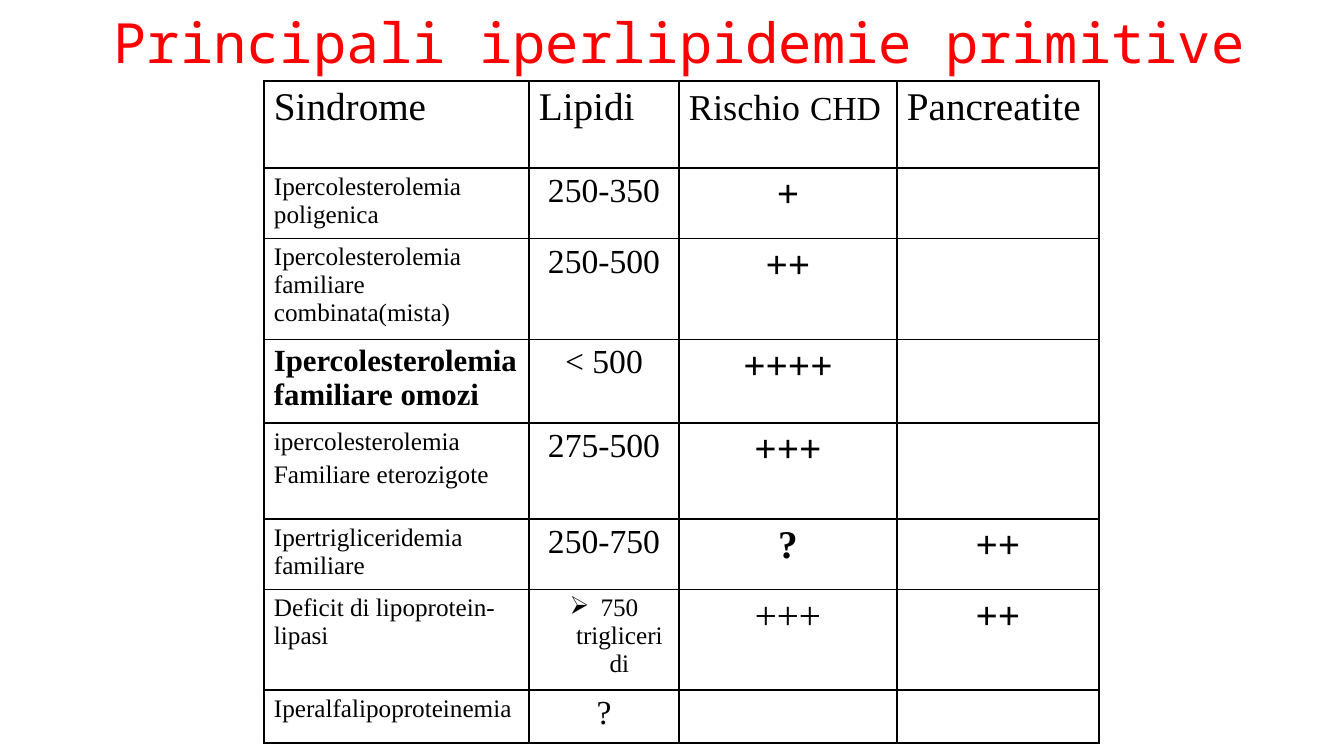
from dataclasses import dataclass

from lxml import etree
from pptx import Presentation
from pptx.dml.color import RGBColor
from pptx.enum.text import MSO_ANCHOR, PP_ALIGN
from pptx.oxml.ns import qn
from pptx.util import Emu, Pt

LEFT, CENTER = PP_ALIGN.LEFT, PP_ALIGN.CENTER
TOP, MIDDLE = MSO_ANCHOR.TOP, MSO_ANCHOR.MIDDLE
BLACK = RGBColor(0, 0, 0)
RED = RGBColor(255, 0, 0)
SERIF, MONO = "Times New Roman", "Noto Sans Mono"
SCALE = 914400 / 100.8
THIN, THICK = 1, 2.25
WIDTHS = [265, 150, 218, 202]
HEIGHTS = [87, 66, 94, 78, 96, 66, 94, 53]


@dataclass(frozen=True)
class Run:
    text: str
    size: float = 18
    bold: bool = False


@dataclass(frozen=True)
class Cell:
    lines: tuple[tuple[Run, ...], ...] = ()
    align: PP_ALIGN = LEFT
    bullet: str = ""


def px(n: int) -> Emu:
    return Emu(round(n * SCALE))


def name(*lines: str, size: float = 18, bold: bool = False) -> Cell:
    return Cell(tuple((Run(line, size, bold),) for line in lines))


def value(text: str, size: float = 24) -> Cell:
    return Cell(((Run(text, size),),), CENTER)


def mark(text: str, bold: bool = True) -> Cell:
    return Cell(((Run(text, 28, bold),),), CENTER)


EMPTY = Cell()
RISK = Cell(((Run("Rischio", 26), Run(" ", 28), Run("CHD", 24)),))
FAT = Cell(((Run("750 trigliceridi"),),), CENTER, "➢")
ROWS = [
    [name("Sindrome", size=28), name("Lipidi", size=28), RISK,
     name("Pancreatite", size=28)],
    [name("Ipercolesterolemia poligenica"), value("250-350"), mark("+"), EMPTY],
    [name("Ipercolesterolemia familiare combinata(mista)"),
     value("250-500"), mark("++"), EMPTY],
    [name("Ipercolesterolemia familiare omozi", size=22, bold=True),
     value("< 500"), mark("++++"), EMPTY],
    [name("ipercolesterolemia", "Familiare eterozigote"),
     value("275-500"), mark("+++"), EMPTY],
    [name("Ipertrigliceridemia familiare"), value("250-750"), mark("?"), mark("++")],
    [name("Deficit di lipoprotein-lipasi"), FAT, mark("+++", False), mark("++")],
    [name("Iperalfalipoproteinemia"), value("?"), EMPTY, EMPTY],
]


def add_run(para, run: Run, face: str = SERIF, color: RGBColor = BLACK) -> None:
    part = para.add_run()
    part.text = run.text
    form = {"name": face, "size": Pt(run.size), "bold": run.bold}
    for key, val in form.items():
        setattr(part.font, key, val)
    part.font.color.rgb = color


def add_bullet(para, char: str) -> None:
    props = para._p.get_or_add_pPr()
    props.set("marL", str(px(31)))
    props.set("indent", str(-px(31)))
    etree.SubElement(props, qn("a:buChar")).set("char", char)


def add_edge(cell, side: str, width: float) -> None:
    line = etree.SubElement(cell._tc.get_or_add_tcPr(), qn(f"a:ln{side}"))
    line.set("w", str(Pt(width)))
    fill = etree.SubElement(line, qn("a:solidFill"))
    etree.SubElement(fill, qn("a:srgbClr")).set("val", str(BLACK))


def fill_cell(cell, data: Cell) -> None:
    form = {"margin_left": px(10), "margin_right": px(10), "margin_top": px(5),
            "margin_bottom": px(5), "vertical_anchor": TOP}
    for key, val in form.items():
        setattr(cell, key, val)
    frame = cell.text_frame
    for i, line in enumerate(data.lines):
        para = frame.add_paragraph() if i else frame.paragraphs[0]
        para.alignment = data.align
        if i:
            para.space_before = Pt(line[0].size * 0.2)
        if data.bullet:
            add_bullet(para, data.bullet)
        for run in line:
            add_run(para, run)


def add_title(slide) -> None:
    frame = slide.shapes.add_textbox(px(84), px(17), px(1224), px(49)).text_frame
    form = {"word_wrap": True, "vertical_anchor": MIDDLE, "margin_left": px(10),
            "margin_right": px(44), "margin_top": px(5), "margin_bottom": px(5)}
    for key, val in form.items():
        setattr(frame, key, val)
    para = frame.paragraphs[0]
    para.alignment = CENTER
    add_run(para, Run("Principali iperlipidemie primitive", 39.6), MONO, RED)


def add_grid(slide) -> None:
    rows, cols = len(HEIGHTS), len(WIDTHS)
    table = slide.shapes.add_table(rows, cols, px(264), px(81),
                                   px(sum(WIDTHS)), px(sum(HEIGHTS))).table
    table.first_row = table.horz_banding = False
    for col, width in zip(table.columns, WIDTHS):
        col.width = px(width)
    for r, line in enumerate(ROWS):
        table.rows[r].height = px(HEIGHTS[r])
        for c, data in enumerate(line):
            cell = table.cell(r, c)
            fill_cell(cell, data)
            # Outer edges are thick, inner ones thin
            outer = {"L": c == 0, "R": c == cols - 1, "T": r == 0, "B": r == rows - 1}
            for side, rim in outer.items():
                add_edge(cell, side, THICK if rim else THIN)
            cell.fill.background()


def main() -> None:
    deck = Presentation()
    deck.slide_width, deck.slide_height = px(1344), px(756)
    slide = deck.slides.add_slide(deck.slide_layouts[6])
    add_title(slide)
    add_grid(slide)
    deck.save("out.pptx")


if __name__ == "__main__":
    main()
